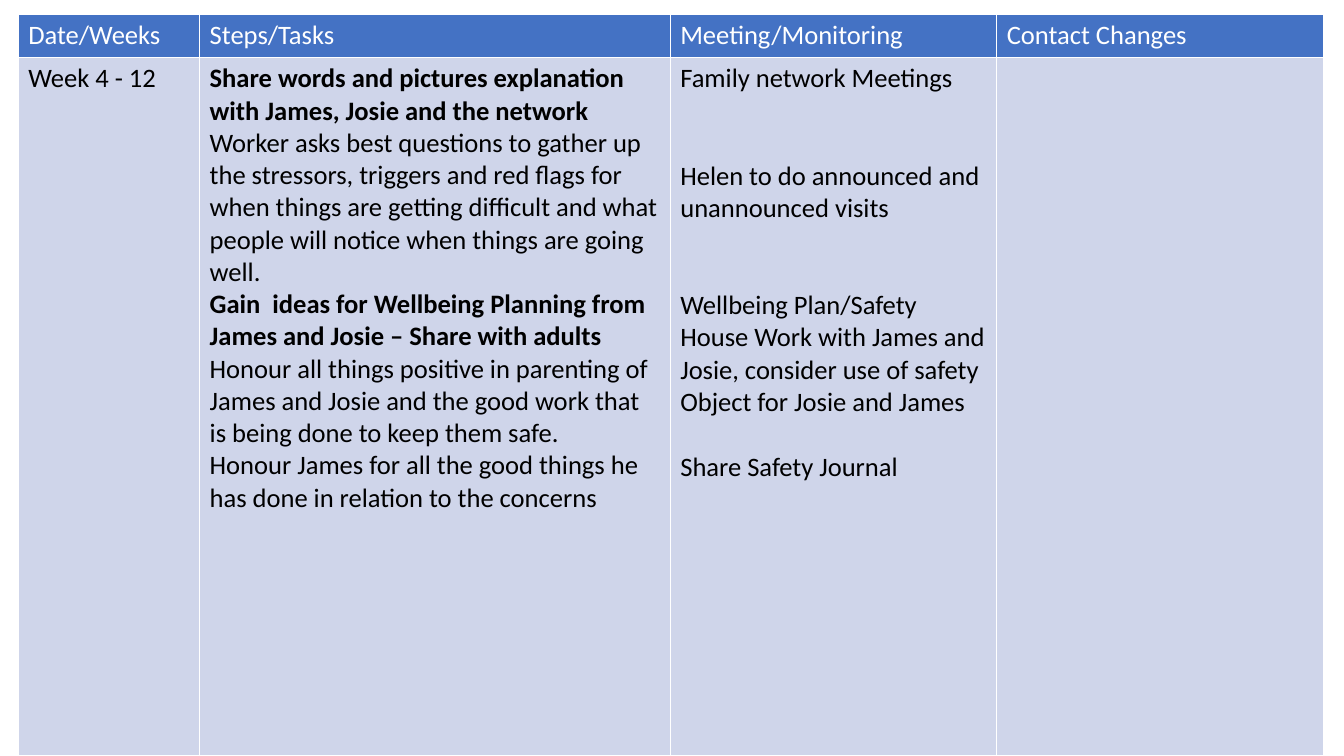
import dataclasses

import pptx
import pptx.dml.color
import pptx.oxml
import pptx.oxml.ns
import pptx.util

Cm = pptx.util.Cm
Pt = pptx.util.Pt
RGB = pptx.dml.color.RGBColor.from_string


@dataclasses.dataclass(frozen=True)
class Theme:
    font: str = "Calibri"
    size: int = 19
    line: float = 23.2  # height of one text line, in points
    border: int = 1
    header_fill: str = "4472C4"
    header_text: str = "FFFFFF"
    body_fill: str = "CFD5EA"
    body_text: str = "000000"
    border_color: str = "FFFFFF"


THEME = Theme()

# Table contents: each body paragraph is (text, bold, lines left free above)
HEADERS = ["Date/Weeks", "Steps/Tasks", "Meeting/Monitoring", "Contact Changes"]
WEEKS = [("Week 4 - 12", False, 0)]
STEPS = [
    ("Share words and pictures explanation with James, Josie and the network", True, 0),
    ("Worker asks best questions to gather up the stressors, triggers and red flags "
     "for when things are getting difficult and what people will notice when things "
     "are going well.", False, 0),
    ("Gain  ideas for Wellbeing Planning from James and Josie – Share with adults", True, 0),
    ("Honour all things positive in parenting of James and Josie and the good work "
     "that is being done to keep them safe.", False, 0),
    ("Honour James for all the good things he has done in relation to the concerns",
     False, 0),
]
MEETINGS = [
    ("Family network Meetings", False, 0),
    ("Helen to do announced and unannounced visits", False, 2),
    ("Wellbeing Plan/Safety House Work with James and Josie, consider use of safety "
     "Object for Josie and James", False, 2),
    ("Share Safety Journal", False, 1),
]
ROWS = [
    [[(header, False, 0)] for header in HEADERS],
    [WEEKS, STEPS, MEETINGS, []],
]
COL_SHARES = [1.8, 4.67, 3.24, 3.24]
HEADER_HEIGHT = 1.09


def set_borders(cell):
    tcPr = cell._tc.get_or_add_tcPr()
    for side in "LRTB":
        tcPr.append(pptx.oxml.parse_xml(
            f'<a:ln{side} {pptx.oxml.ns.nsdecls("a")} w="{Pt(THEME.border)}">'
            f'<a:solidFill><a:srgbClr val="{THEME.border_color}"/></a:solidFill>'
            f'</a:ln{side}>'))


def fill_cell(cell, paragraphs, fill, color):
    set_borders(cell)
    cell.fill.solid()
    cell.fill.fore_color.rgb = RGB(fill)
    tf = cell.text_frame
    for i, (text, bold, gap) in enumerate(paragraphs):
        p = tf.add_paragraph() if i else tf.paragraphs[0]
        p.text = text
        p.space_before = Pt(gap * THEME.line)
        p.font.name = THEME.font
        p.font.size = Pt(THEME.size)
        p.font.bold = bold
        p.font.color.rgb = RGB(color)


def add_plan_table(s, left, top, width, height):
    table = s.shapes.add_table(len(ROWS), len(HEADERS), Cm(left), Cm(top),
                               Cm(width), Cm(height)).table
    table.horz_banding = False

    # Columns share the width; the body row takes the height below the header
    for col, share in zip(table.columns, COL_SHARES):
        col.width = Cm(width * share / sum(COL_SHARES))
    table.rows[0].height = Cm(HEADER_HEIGHT)
    table.rows[1].height = Cm(height - HEADER_HEIGHT)

    # Header and body cells
    styles = [(THEME.header_fill, THEME.header_text), (THEME.body_fill, THEME.body_text)]
    for r, (row, (fill, color)) in enumerate(zip(ROWS, styles)):
        for c, paragraphs in enumerate(row):
            fill_cell(table.cell(r, c), paragraphs, fill, color)


def main():
    prs = pptx.Presentation()
    prs.slide_width, prs.slide_height = Cm(33.87), Cm(19.05)
    s = prs.slides.add_slide(prs.slide_layouts[6])
    add_plan_table(s, 0.46, 0.36, 32.89, 18.69)
    prs.save("out.pptx")


if __name__ == "__main__":
    main()
